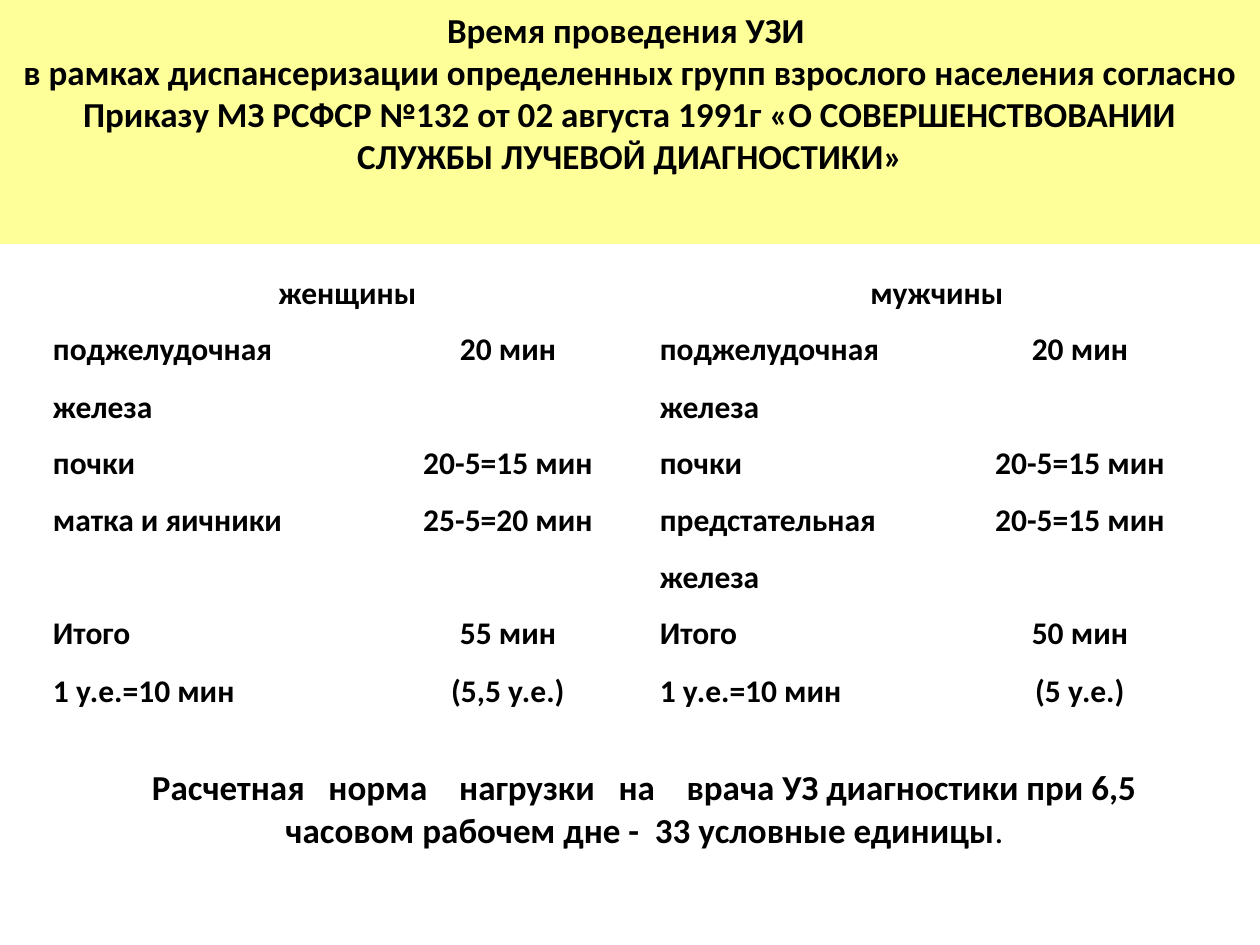
from pptx import Presentation
from pptx.dml.color import RGBColor
from pptx.enum.shapes import MSO_SHAPE
from pptx.enum.text import MSO_ANCHOR, PP_ALIGN
from pptx.util import Pt

PX = 914400 // 126  # EMU in one px
RECTANGLE = MSO_SHAPE.RECTANGLE
MIDDLE, TOP = MSO_ANCHOR.MIDDLE, MSO_ANCHOR.TOP
LEFT, CENTER = PP_ALIGN.LEFT, PP_ALIGN.CENTER

BLACK = RGBColor(0x00, 0x00, 0x00)
YELLOW = RGBColor(0xFF, 0xFF, 0x99)
FONT = "Calibri"

TITLE = [
    "Время проведения УЗИ ",
    "в рамках диспансеризации определенных групп взрослого населения согласно "
    "Приказу МЗ РСФСР №132 от 02 августа 1991г «О СОВЕРШЕНСТВОВАНИИ "
    "СЛУЖБЫ ЛУЧЕВОЙ ДИАГНОСТИКИ»",
]
NORM = ("Расчетная   норма    нагрузки   на    врача УЗ диагностики при 6,5 "
        "часовом рабочем дне -  33 условные единицы")

GROUPS = ["женщины", "мужчины"]
UNIT = "1 у.е.=10 мин"
# Each cell is a list of paragraphs
EXAMS = [
    [["поджелудочная железа"], ["20 мин"], ["поджелудочная железа"], ["20 мин"]],
    [["почки"], ["20-5=15 мин"], ["почки"], ["20-5=15 мин"]],
    [["матка и яичники"], ["25-5=20 мин"],
     ["предстательная железа"], ["20-5=15 мин"]],
    [["Итого", UNIT], ["55 мин", "(5,5 у.е.)"],
     ["Итого", UNIT], ["50 мин", "(5 у.е.)"]],
]
COLUMN_WIDTHS = [321, 286, 286, 286]
ROW_HEIGHTS = [53, 76, 53, 84, 113]


def add_span(para, text, size=20, bold=True):
    span = para.add_run()
    span.text = text
    font = span.font
    font.name, font.size, font.bold = FONT, Pt(size), bold
    font.color.rgb = BLACK


def write(frame, lines, align=CENTER, spacing=None, **style):
    for index, line in enumerate(lines):
        para = frame.add_paragraph() if index else frame.paragraphs[0]
        para.alignment = align
        if spacing:
            para.line_spacing = spacing
        add_span(para, line, **style)


def set_frame(frame, anchor, bottom=6):
    frame.word_wrap = True
    frame.vertical_anchor = anchor
    frame.margin_left = frame.margin_right = 13 * PX
    frame.margin_top, frame.margin_bottom = 6 * PX, bottom * PX


def add_banner(page, left, top, width, height):
    banner = page.shapes.add_shape(
        RECTANGLE, left * PX, top * PX, width * PX, height * PX)
    banner.shadow.inherit = False
    banner.fill.solid()
    banner.fill.fore_color.rgb = YELLOW
    banner.line.fill.background()
    set_frame(banner.text_frame, MIDDLE, bottom=65)
    write(banner.text_frame, TITLE)


def fill_cell(cell, lines, align):
    cell.fill.background()
    cell.margin_left = cell.margin_right = 9 * PX
    cell.margin_top = cell.margin_bottom = 0
    write(cell.text_frame, lines, align=align, spacing=1.5, size=18)


def add_time_table(page, left, top):
    table = page.shapes.add_table(
        len(ROW_HEIGHTS), len(COLUMN_WIDTHS), left * PX, top * PX,
        sum(COLUMN_WIDTHS) * PX, sum(ROW_HEIGHTS) * PX).table
    table.first_row = table.horz_banding = False
    for column, width in zip(table.columns, COLUMN_WIDTHS):
        column.width = width * PX
    for row, height in zip(table.rows, ROW_HEIGHTS):
        row.height = height * PX

    # Header: each group spans an exam column and a time column
    for index, group in enumerate(GROUPS):
        first = table.cell(0, 2 * index)
        first.merge(table.cell(0, 2 * index + 1))
        fill_cell(first, [group], CENTER)

    # Exams to the left, times centred
    for row, cells in enumerate(EXAMS, start=1):
        for column, lines in enumerate(cells):
            fill_cell(table.cell(row, column), lines,
                      CENTER if column % 2 else LEFT)


def add_norm(page, left, top, width, height):
    box = page.shapes.add_textbox(
        left * PX, top * PX, width * PX, height * PX)
    set_frame(box.text_frame, TOP)
    write(box.text_frame, [NORM])
    add_span(box.text_frame.paragraphs[0], ".", bold=False)


def main():
    deck = Presentation()
    deck.slide_width, deck.slide_height = 1260 * PX, 945 * PX
    page = deck.slides.add_slide(deck.slide_layouts[6])
    add_norm(page, 84, 760, 1121, 118)
    add_banner(page, 0, 0, 1260, 244)
    add_time_table(page, 44, 255)
    deck.save("out.pptx")


if __name__ == "__main__":
    main()
